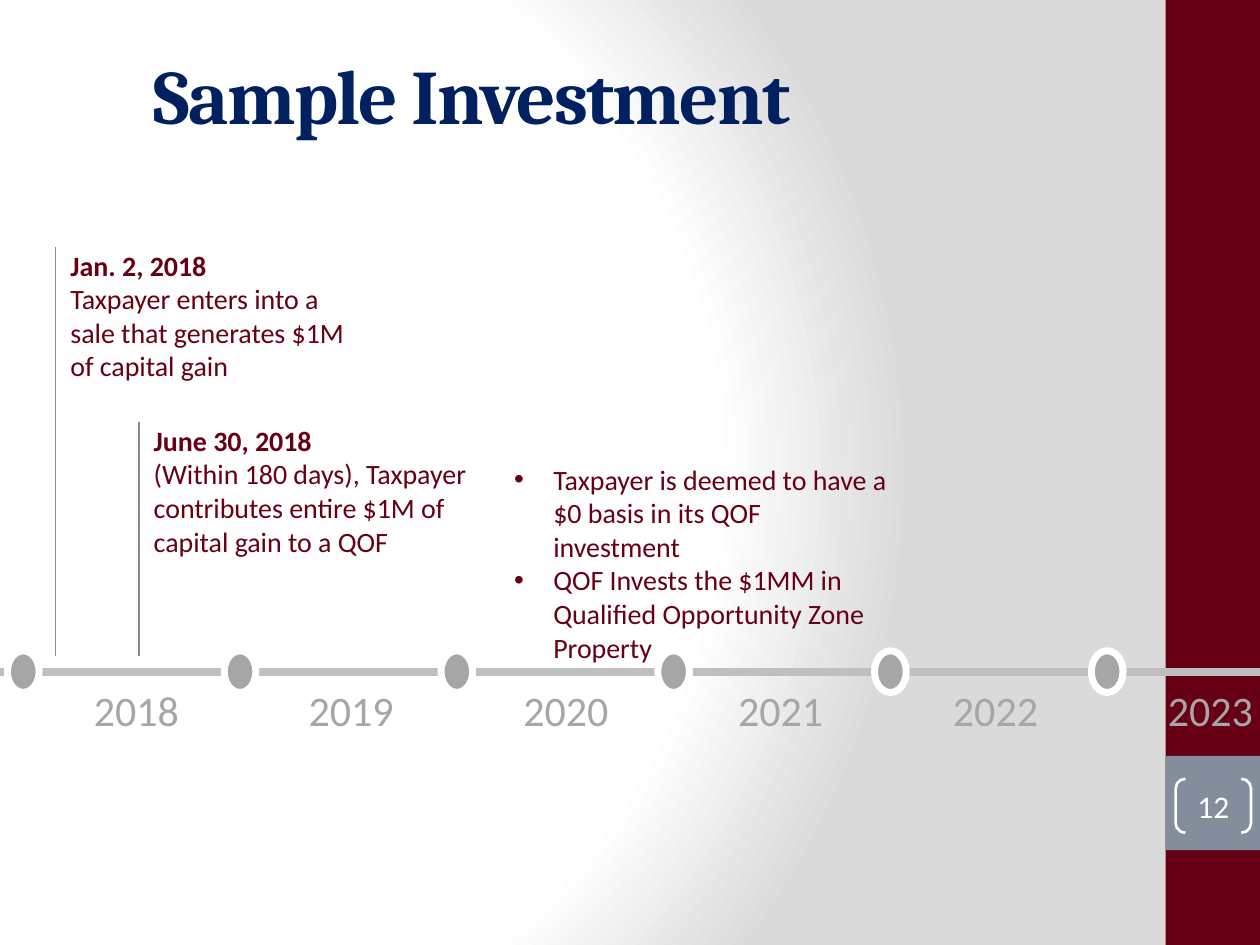
from lxml.etree import SubElement
from pptx import Presentation
from pptx.dml.color import RGBColor
from pptx.enum.shapes import MSO_CONNECTOR as Connector, MSO_SHAPE as Shape
from pptx.enum.text import MSO_ANCHOR as Anchor, MSO_AUTO_SIZE as AutoSize, PP_ALIGN as Align
from pptx.oxml.ns import qn
from pptx.util import Cm, Pt

COLORS = {
    "maroon": "680015",
    "slate": "838D9B",
    "marker": "808A98",
    "axis": "BFBFBF",
    "gray": "A6A6A6",
    "navy": "002060",
    "white": "FFFFFF",
    "shade": "DADADA",
}
SLIDE_WIDTH, SLIDE_HEIGHT = 25.4, 19.05
BAND_LEFT, BAND_WIDTH = 23.5, 1.9
AXIS_Y = 13.54
MARKER_BOTTOM = 13.23
DOT_WIDTH, DOT_HEIGHT = 0.64, 0.84
FIRST_DOT, DOT_STEP = 0.15, 4.37
FIRST_YEAR_LEFT, YEAR_STEP = 1.63, 4.33
YEARS = range(2018, 2024)

EVENTS = [
    (1.12, 4.98, 6.02, "Jan. 2, 2018",
     "Taxpayer enters into a sale that generates $1M of capital gain"),
    (2.8, 8.51, 7.16, "June 30, 2018",
     "(Within 180 days), Taxpayer contributes entire $1M of capital gain to a QOF"),
]
BULLETS = [
    "Taxpayer is deemed to have a $0 basis in its QOF investment",
    "QOF Invests the $1MM in Qualified Opportunity Zone Property",
]


def color(name):
    return RGBColor.from_string(COLORS[name])


def place(shape, left, top, width, height):
    shape.left, shape.top = Cm(left), Cm(top)
    shape.width, shape.height = Cm(width), Cm(height)


def format_runs(paragraph, size, color_name, bold=False, font="Calibri"):
    for run in paragraph.runs:
        run.font.name = font
        run.font.size = Pt(size)
        run.font.bold = bold
        run.font.color.rgb = color(color_name)


def set_background(slide):
    slide.background.fill.gradient()
    gradient = slide.element.find(".//" + qn("a:gradFill"))
    for child in list(gradient):
        gradient.remove(child)
    stops = SubElement(gradient, qn("a:gsLst"))
    for position, name in ((0, "white"), (75, "white"), (100, "shade")):
        stop = SubElement(stops, qn("a:gs"), pos=str(position * 1000))
        SubElement(stop, qn("a:srgbClr"), val=COLORS[name])
    circle = SubElement(gradient, qn("a:path"), path="circle")
    SubElement(circle, qn("a:fillToRect"), l="20000", t="50000", r="100000", b="50000")


def add_shape(slide, kind, box, fill=None, line=None, line_width=1):
    shape = slide.shapes.add_shape(kind, *map(Cm, box))
    shape.shadow.inherit = False
    if fill:
        shape.fill.solid()
        shape.fill.fore_color.rgb = color(fill)
    else:
        shape.fill.background()
    if line:
        shape.line.color.rgb = color(line)
        shape.line.width = Pt(line_width)
    else:
        shape.line.fill.background()
    return shape


def add_line(slide, start, end, color_name, width):
    line = slide.shapes.add_connector(Connector.STRAIGHT, *map(Cm, start + end))
    line.line.color.rgb = color(color_name)
    line.line.width = Pt(width)
    SubElement(line.element.spPr, qn("a:effectLst"))


def add_text(slide, box, text, wrap=True):
    frame = slide.shapes.add_textbox(*map(Cm, box)).text_frame
    frame.word_wrap = wrap
    frame.text = text
    return frame.paragraphs


def add_timeline(slide):
    add_line(slide, (0, AXIS_Y), (SLIDE_WIDTH, AXIS_Y), "axis", 4.5)
    for index, year in enumerate(YEARS):
        dot = (FIRST_DOT + index * DOT_STEP, AXIS_Y - DOT_HEIGHT / 2, DOT_WIDTH, DOT_HEIGHT)
        add_shape(slide, Shape.OVAL, dot, "gray", "white", 4)
        label = (FIRST_YEAR_LEFT + index * YEAR_STEP, 13.67, 2.24, 1.27)
        paragraph = add_text(slide, label, str(year), wrap=False)[0]
        paragraph.alignment = Align.CENTER
        format_runs(paragraph, 24, "gray")


def add_event(slide, left, top, width, date, description):
    add_line(slide, (left, MARKER_BOTTOM), (left, top), "marker", 1)
    box = (left + 0.05, top - 0.1, width, 3.68)
    heading, body = add_text(slide, box, f"{date}\n{description}")
    format_runs(heading, 16, "maroon", bold=True)
    format_runs(body, 16, "maroon")


def fill_title(title):
    place(title, 2.84, 0.84, 19.58, 2.97)
    frame = title.text_frame
    frame.text = "Sample Investment"
    frame.vertical_anchor = Anchor.TOP
    frame.auto_size = AutoSize.NONE
    paragraph = frame.paragraphs[0]
    paragraph.alignment = Align.LEFT
    format_runs(paragraph, 44, "navy", bold=True, font="Cambria")
    paragraph.runs[0].font._element.set("spc", "-100")


def fill_bullets(body):
    place(body, 10.11, 9.19, 8.05, 4.37)
    frame = body.text_frame
    frame.text = "\n".join(BULLETS)
    frame.auto_size = AutoSize.NONE
    for paragraph in frame.paragraphs:
        paragraph.space_before = Pt(0)
        format_runs(paragraph, 16, "maroon")
        properties = paragraph._p.get_or_add_pPr()
        properties.set("marL", str(Cm(0.79)))
        properties.set("indent", str(Cm(-0.79)))
        SubElement(properties, qn("a:buChar"), char="•")


def add_page_number(slide):
    shape = add_shape(slide, Shape.DOUBLE_BRACKET, (23.7, 15.7, 1.52, 1.09),
                      line="white", line_width=1.5)
    shape.adjustments[0] = 0.18
    frame = shape.text_frame
    frame.margin_left = frame.margin_right = frame.margin_top = frame.margin_bottom = 0
    frame.vertical_anchor = Anchor.MIDDLE
    frame.text = "12"
    frame.paragraphs[0].alignment = Align.CENTER
    format_runs(frame.paragraphs[0], 18, "white")


def main():
    presentation = Presentation()
    presentation.slide_width, presentation.slide_height = Cm(SLIDE_WIDTH), Cm(SLIDE_HEIGHT)
    slide = presentation.slides.add_slide(presentation.slide_layouts[1])
    set_background(slide)
    fill_title(slide.shapes.title)
    fill_bullets(slide.placeholders[1])
    add_shape(slide, Shape.RECTANGLE, (BAND_LEFT, 0, BAND_WIDTH, SLIDE_HEIGHT), "maroon")
    add_shape(slide, Shape.RECTANGLE, (BAND_LEFT, 15.24, BAND_WIDTH, 1.9), "slate")
    add_timeline(slide)
    for event in EVENTS:
        add_event(slide, *event)
    add_page_number(slide)
    presentation.save("out.pptx")


if __name__ == "__main__":
    main()
